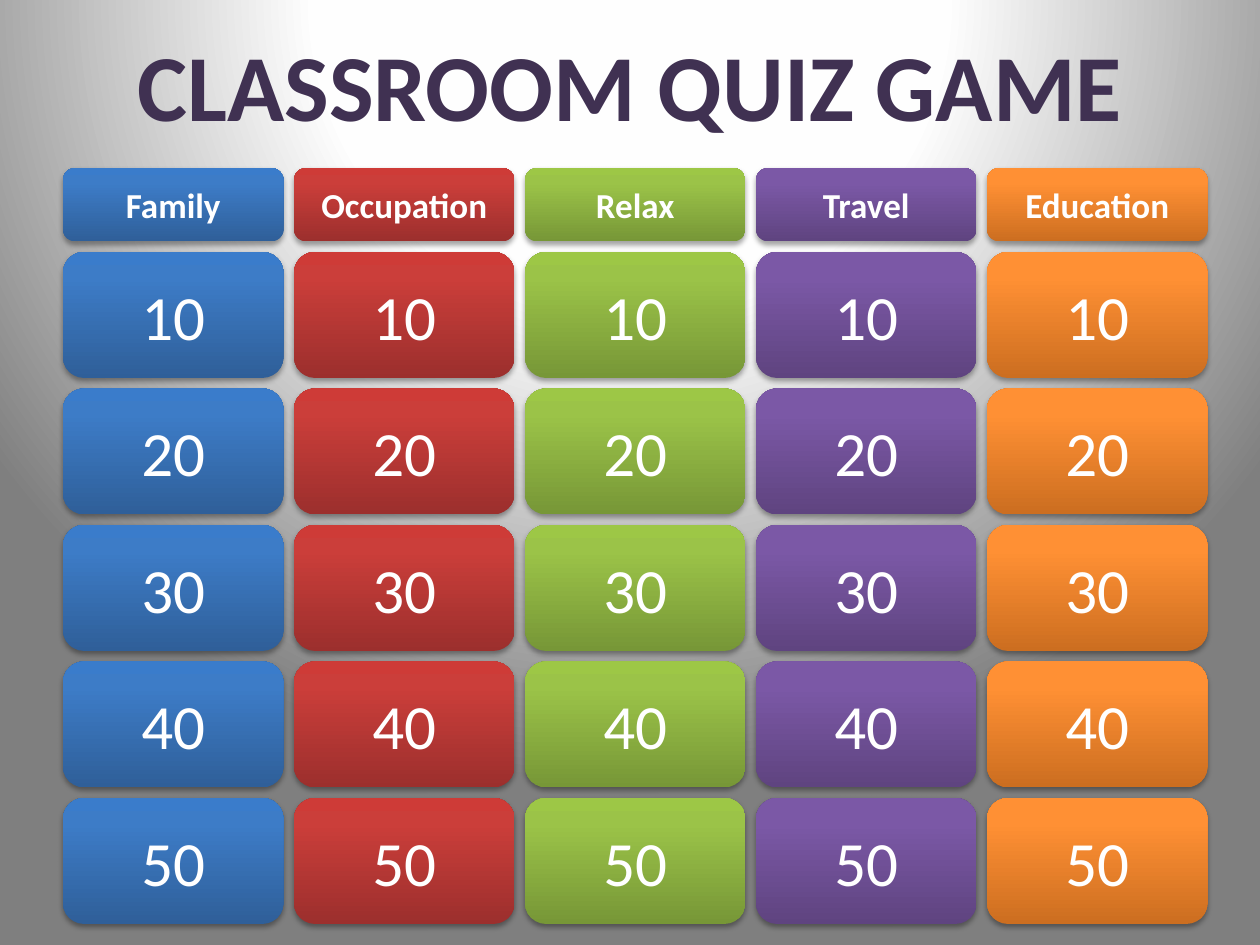
from lxml import etree
from pptx import Presentation
from pptx.dml.color import RGBColor
from pptx.enum.shapes import MSO_SHAPE
from pptx.enum.text import MSO_ANCHOR, PP_ALIGN
from pptx.oxml.ns import qn
from pptx.util import Inches, Pt

ROUNDED = MSO_SHAPE.ROUNDED_RECTANGLE
CENTER = PP_ALIGN.CENTER
MIDDLE = MSO_ANCHOR.MIDDLE

WHITE = RGBColor(0xFF, 0xFF, 0xFF)
NEAR_WHITE = RGBColor(0xFE, 0xFE, 0xFE)
GRAY = RGBColor(0x7F, 0x7F, 0x7F)
BLACK = RGBColor(0x00, 0x00, 0x00)
PLUM = RGBColor(0x40, 0x31, 0x52)
BLUES = RGBColor(0x2F, 0x5F, 0x99), RGBColor(0x3D, 0x7C, 0xC7), RGBColor(0x3A, 0x7C, 0xCB)
REDS = RGBColor(0x9C, 0x2F, 0x2D), RGBColor(0xCB, 0x3E, 0x3A), RGBColor(0xCE, 0x3B, 0x37)
GREENS = RGBColor(0x77, 0x97, 0x37), RGBColor(0x9B, 0xC3, 0x48), RGBColor(0x9D, 0xC7, 0x46)
PURPLES = RGBColor(0x5F, 0x44, 0x80), RGBColor(0x7B, 0x58, 0xA6), RGBColor(0x7C, 0x57, 0xA8)
ORANGES = RGBColor(0xCC, 0x6E, 0x20), RGBColor(0xFF, 0x90, 0x34), RGBColor(0xFF, 0x91, 0x36)

CATEGORIES = [("Family", BLUES), ("Occupation", REDS), ("Relax", GREENS),
              ("Travel", PURPLES), ("Education", ORANGES)]
POINTS = [10, 20, 30, 40, 50]

GAP = 1 / 12
LEFT, TILE_W, TILE_H = 0.5, 1.75, 1
HEADER_TOP, HEADER_H = 4 / 3, 7 / 12
GRID_TOP = HEADER_TOP + HEADER_H + GAP


def add_xml(parent, tag, **attrs):
    return etree.SubElement(parent, qn(tag), {k: str(v) for k, v in attrs.items()})


class Board:
    font = "Calibri"

    def __init__(self, prs):
        self.s = prs.slides.add_slide(prs.slide_layouts[5])

    def gradient(self, fill_parent, positions, colors):
        """Replace the solid fill with gradient stops and return the gradient."""
        solid = fill_parent.find(qn("a:solidFill"))
        grad = etree.Element(qn("a:gradFill"), rotWithShape="1")
        stops = add_xml(grad, "a:gsLst")
        for pos, color in zip(positions, colors):
            stop = add_xml(stops, "a:gs", pos=pos * 1000)
            add_xml(stop, "a:srgbClr", val=color)
        fill_parent.replace(solid, grad)
        return grad

    def background(self):
        self.s.background.fill.solid()
        bg = next(self.s.element.iter(qn("p:bgPr")))
        grad = self.gradient(bg, (0, 40, 100), (WHITE, NEAR_WHITE, GRAY))
        circle = add_xml(grad, "a:path", path="circle")
        add_xml(circle, "a:fillToRect", l=50000, t=-80000, r=50000, b=180000)

    def text(self, sp, text, size, color, bold):
        tf = sp.text_frame
        tf.word_wrap = True
        tf.vertical_anchor = MIDDLE
        p = tf.paragraphs[0]
        p.alignment = CENTER
        r = p.add_run()
        r.text = text
        r.font.name = self.font
        r.font.size = Pt(size)
        r.font.bold = bold
        r.font.color.rgb = color

    def title(self, text):
        sp = self.s.shapes.title
        sp.left, sp.top = Inches(0.5), Inches(0)
        sp.width, sp.height = Inches(9), Inches(1.33)
        self.text(sp, text, 54, PLUM, True)

    def shadow(self, sp):
        sp.shadow.inherit = False
        effects = sp.element.spPr.find(qn("a:effectLst"))
        outer = add_xml(effects, "a:outerShdw", blurRad=Pt(3.1), dist=Pt(1.8),
                        dir=5400000, rotWithShape=0)
        add_xml(add_xml(outer, "a:srgbClr", val=BLACK), "a:alpha", val=35000)

    def tile(self, column, top, height, text, size, colors, bold=False):
        left = LEFT + column * (TILE_W + GAP)
        sp = self.s.shapes.add_shape(ROUNDED, Inches(left), Inches(top),
                                     Inches(TILE_W), Inches(height))
        sp.fill.solid()
        sp.line.fill.background()
        grad = self.gradient(sp.element.spPr, (0, 80, 100), colors)
        add_xml(grad, "a:lin", ang=16200000, scaled=0)
        self.shadow(sp)
        self.text(sp, text, size, WHITE, bold)


def main():
    prs = Presentation()
    prs.slide_width, prs.slide_height = Inches(10), Inches(7.5)
    board = Board(prs)
    board.background()
    board.title("CLASSROOM QUIZ GAME")
    for column, (name, colors) in enumerate(CATEGORIES):
        board.tile(column, HEADER_TOP, HEADER_H, name, 20, colors, bold=True)
        for row, points in enumerate(POINTS):
            top = GRID_TOP + row * (TILE_H + GAP)
            board.tile(column, top, TILE_H, str(points), 36, colors)
    prs.save("out.pptx")


if __name__ == "__main__":
    main()
